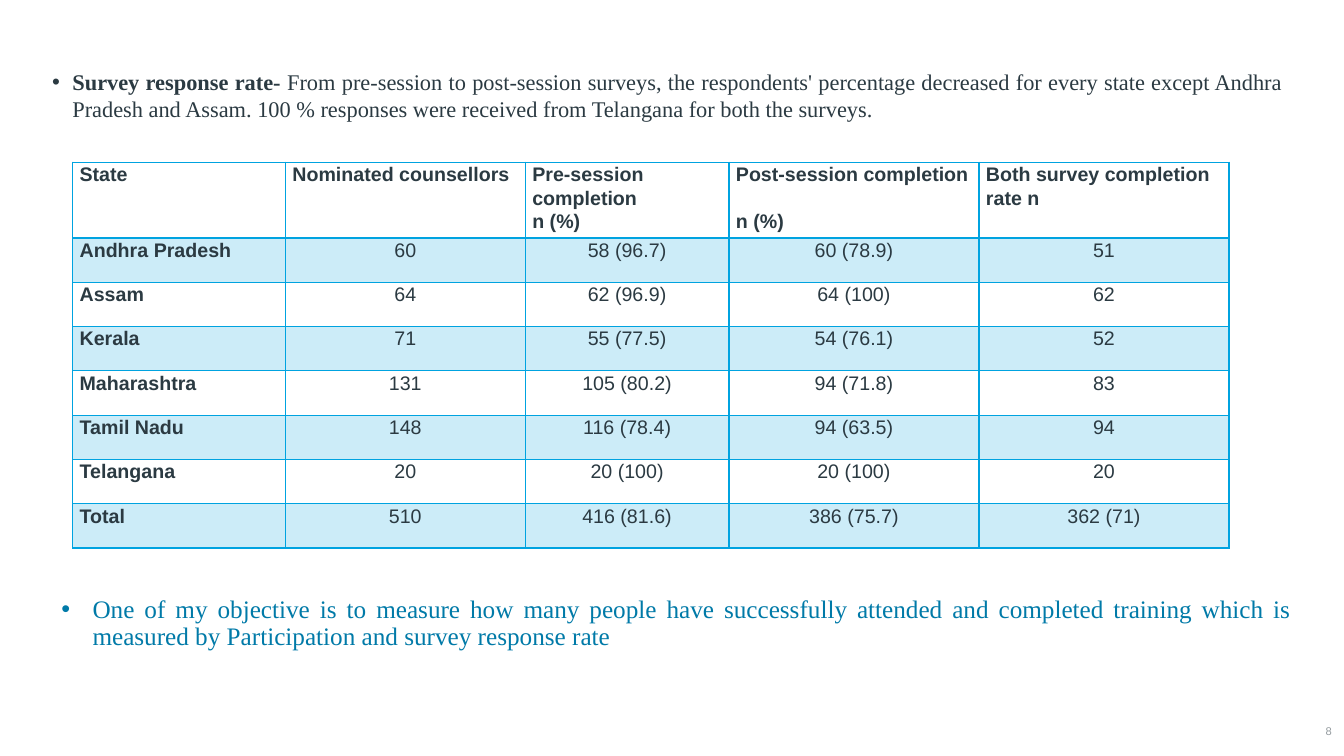
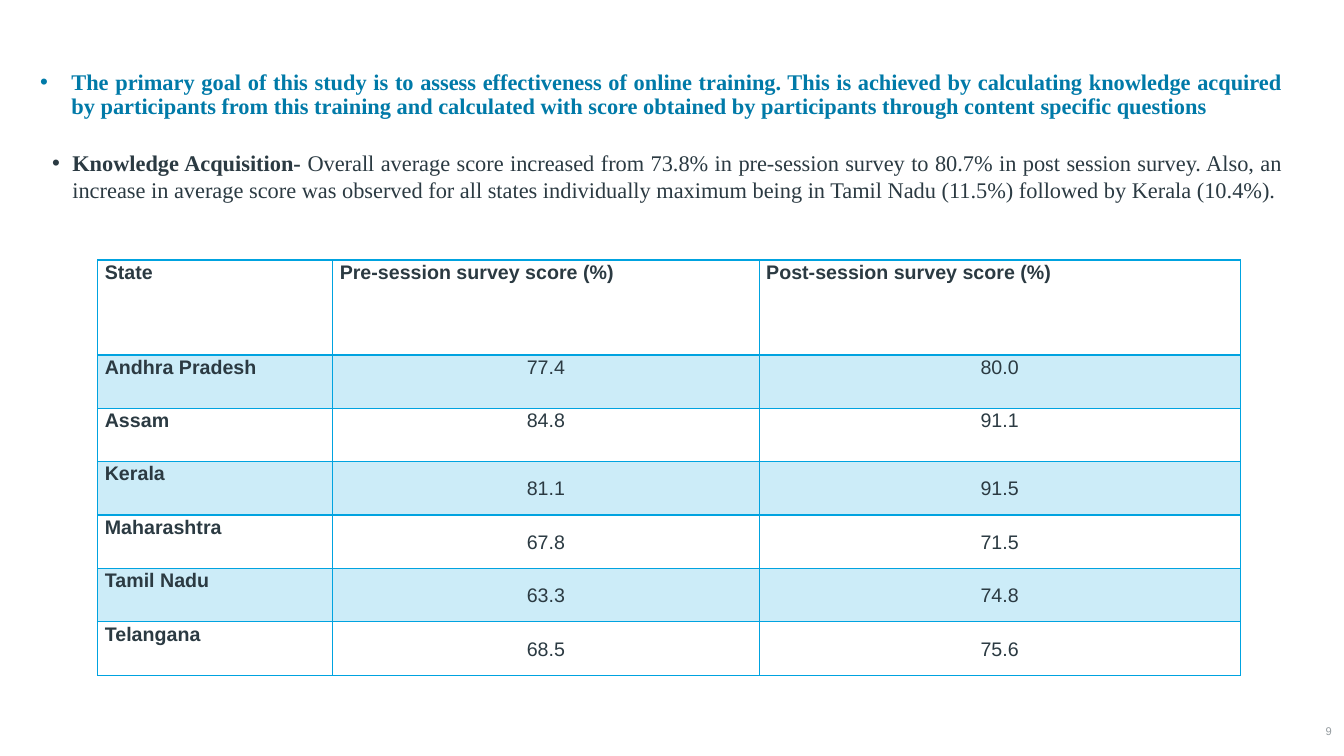
"""Builds two survey result slides with tables by state."""
from lxml import etree
from pptx import Presentation
from pptx.dml.color import RGBColor
from pptx.enum.text import MSO_ANCHOR, PP_ALIGN
from pptx.oxml.ns import qn
from pptx.util import Inches, Pt

TOP, MIDDLE, BOTTOM = MSO_ANCHOR.TOP, MSO_ANCHOR.MIDDLE, MSO_ANCHOR.BOTTOM
LEFT, CENTER, RIGHT, JUSTIFY = PP_ALIGN.LEFT, PP_ALIGN.CENTER, PP_ALIGN.RIGHT, PP_ALIGN.JUSTIFY

INK = RGBColor(0x2B, 0x3A, 0x42)
BLUE = RGBColor(0x00, 0x7A, 0xA8)
CYAN = RGBColor(0x00, 0xA3, 0xE0)
GREY = RGBColor(0x95, 0x9C, 0xA0)
SERIF, SANS = "Times New Roman", "Arial"
BAND_ALPHA = 20000

SLIDES = [
    {
        "number": "8",
        "title": {
            "text": "One of my objective is to measure how many people have successfully attended "
                    "and completed training which is measured by Participation and survey response rate",
            "box": (0.51, 5.89, 12.4, 0.62), "size": 18, "bold": False,
        },
        "finding": {
            "lead": "Survey response rate- ",
            "text": "From pre-session to post-session surveys, the respondents' percentage decreased "
                    "for every state except Andhra Pradesh and Assam. 100 % responses were received "
                    "from Telangana for both the surveys.",
            "box": (0.42, 0.63, 12.4, 0.8),
        },
        "table": {
            "at": (0.72, 1.61), "columns": (2.11, 2.38, 2.02, 2.48, 2.48),
            "header_height": 0.61, "row_height": 0.44, "middle_from": None,
            "rows": [
                ("State", "Nominated counsellors", "Pre-session completion \vn (%)",
                 "Post-session completion \vn (%)", "Both survey completion rate n"),
                ("Andhra Pradesh", "60", "58 (96.7)", "60 (78.9)", "51"),
                ("Assam", "64", "62 (96.9)", "64 (100)", "62"),
                ("Kerala", "71", "55 (77.5)", "54 (76.1)", "52"),
                ("Maharashtra", "131", "105 (80.2)", "94 (71.8)", "83"),
                ("Tamil Nadu", "148", "116 (78.4)", "94 (63.5)", "94"),
                ("Telangana", "20", "20 (100)", "20 (100)", "20"),
                ("Total", "510", "416 (81.6)", "386 (75.7)", "362 (71)"),
            ],
        },
    },
    {
        "number": "9",
        "title": {
            "text": "The primary goal of this study is to assess effectiveness of online training. "
                    "This is achieved by calculating knowledge acquired by participants from this "
                    "training and calculated with score obtained by participants through content "
                    "specific questions",
            "box": (0.3, 0.32, 12.52, 0.91), "size": 16, "bold": True,
        },
        "finding": {
            "lead": "Knowledge Acquisition- ",
            "text": "Overall average score increased from 73.8% in pre-session survey to 80.7% in post "
                    "session survey. Also, an increase in average score was observed for all states "
                    "individually maximum being in Tamil Nadu (11.5%) followed by Kerala (10.4%).",
            "box": (0.42, 1.43, 12.4, 0.8),
        },
        "table": {
            "at": (0.97, 2.58), "columns": (2.33, 4.23, 4.77),
            "header_height": 0.94, "row_height": 0.53, "middle_from": 3,
            "rows": [
                ("State", "Pre-session survey score (%)", "Post-session survey score (%)"),
                ("Andhra Pradesh", "77.4", "80.0"),
                ("Assam", "84.8", "91.1"),
                ("Kerala", "81.1", "91.5"),
                ("Maharashtra", "67.8", "71.5"),
                ("Tamil Nadu", "63.3", "74.8"),
                ("Telangana", "68.5", "75.6"),
            ],
        },
    },
]


def style(paragraph, font_name, size, color, bold=False, align=LEFT):
    paragraph.alignment = align
    font = paragraph.font
    font.name, font.size, font.bold = font_name, Pt(size), bold
    font.color.rgb = color


def add_text(slide, box, anchor):
    frame = slide.shapes.add_textbox(*map(Inches, box)).text_frame
    frame.word_wrap = True
    frame.vertical_anchor = anchor
    return frame


def add_bullet(paragraph, indent):
    props = paragraph._p.get_or_add_pPr()
    props.set("marL", str(Inches(indent)))
    props.set("indent", str(-Inches(indent)))
    bullet_font = etree.Element(qn("a:buFont"), typeface=SANS)
    bullet = etree.Element(qn("a:buChar"), char="•")
    default_run = props.find(qn("a:defRPr"))
    default_run.addprevious(bullet_font)
    default_run.addprevious(bullet)


def add_title(slide, title):
    paragraph = add_text(slide, title["box"], BOTTOM).paragraphs[0]
    paragraph.text = title["text"]
    style(paragraph, SERIF, title["size"], BLUE, title["bold"], JUSTIFY)
    paragraph.line_spacing = 0.9
    add_bullet(paragraph, 0.31)


def add_finding(slide, finding):
    paragraph = add_text(slide, finding["box"], TOP).paragraphs[0]
    lead = paragraph.add_run()
    lead.text, lead.font.bold = finding["lead"], True
    paragraph.add_run().text = finding["text"]
    style(paragraph, SERIF, 16, INK, align=JUSTIFY)
    paragraph.space_before = Pt(10)
    add_bullet(paragraph, 0.2)


def add_number(slide, number):
    frame = add_text(slide, (12.82, 7.16, 0.39, 0.19), MIDDLE)
    frame.margin_left = frame.margin_right = frame.margin_top = frame.margin_bottom = 0
    frame.paragraphs[0].text = number
    style(frame.paragraphs[0], SANS, 8, GREY, align=RIGHT)


def set_borders(cell, widths):
    props = cell._tc.get_or_add_tcPr()
    for position, (side, width) in enumerate(widths.items()):
        line = etree.Element(qn(f"a:ln{side}"), w=str(Pt(width)))
        fill = etree.SubElement(line, qn("a:solidFill"))
        etree.SubElement(fill, qn("a:srgbClr"), val=str(CYAN))
        props.insert(position, line)


def fill_band(cell):
    cell.fill.solid()
    cell.fill.fore_color.rgb = CYAN
    color = cell._tc.tcPr.find(f".//{qn('a:srgbClr')}")
    etree.SubElement(color, qn("a:alpha"), val=str(BAND_ALPHA))


def add_state_table(slide, spec_table):
    rows, columns = spec_table["rows"], spec_table["columns"]
    heights = [spec_table["header_height"]] + [spec_table["row_height"]] * (len(rows) - 1)
    size = (sum(columns), sum(heights))
    table = slide.shapes.add_table(
        len(rows), len(columns), *map(Inches, spec_table["at"] + size)).table
    table.first_row = table.horz_banding = False
    for column, width in zip(table.columns, columns):
        column.width = Inches(width)
    middle_from = spec_table["middle_from"] or len(rows)
    for r, (values, height) in enumerate(zip(rows, heights)):
        table.rows[r].height = Inches(height)
        for c, value in enumerate(values):
            cell = table.cell(r, c)
            is_label = r == 0 or c == 0
            cell.margin_left = cell.margin_right = Inches(0.07)
            cell.margin_top = cell.margin_bottom = 0
            cell.vertical_anchor = MIDDLE if c and r >= middle_from else TOP
            paragraph = cell.text_frame.paragraphs[0]
            paragraph.text = value
            style(paragraph, SANS, 14, INK, is_label, LEFT if is_label else CENTER)
            paragraph.line_spacing = 1.07
            if r % 2:
                fill_band(cell)
            else:
                cell.fill.background()
            set_borders(cell, {"L": 1, "R": 1, "T": 2 if r == 1 else 1, "B": 1 if r else 2})


def main():
    deck = Presentation()
    deck.slide_width, deck.slide_height = Inches(13.33), Inches(7.5)
    for content in SLIDES:
        slide = deck.slides.add_slide(deck.slide_layouts[6])
        add_number(slide, content["number"])
        add_finding(slide, content["finding"])
        add_title(slide, content["title"])
        add_state_table(slide, content["table"])
    deck.save("out.pptx")


if __name__ == "__main__":
    main()
